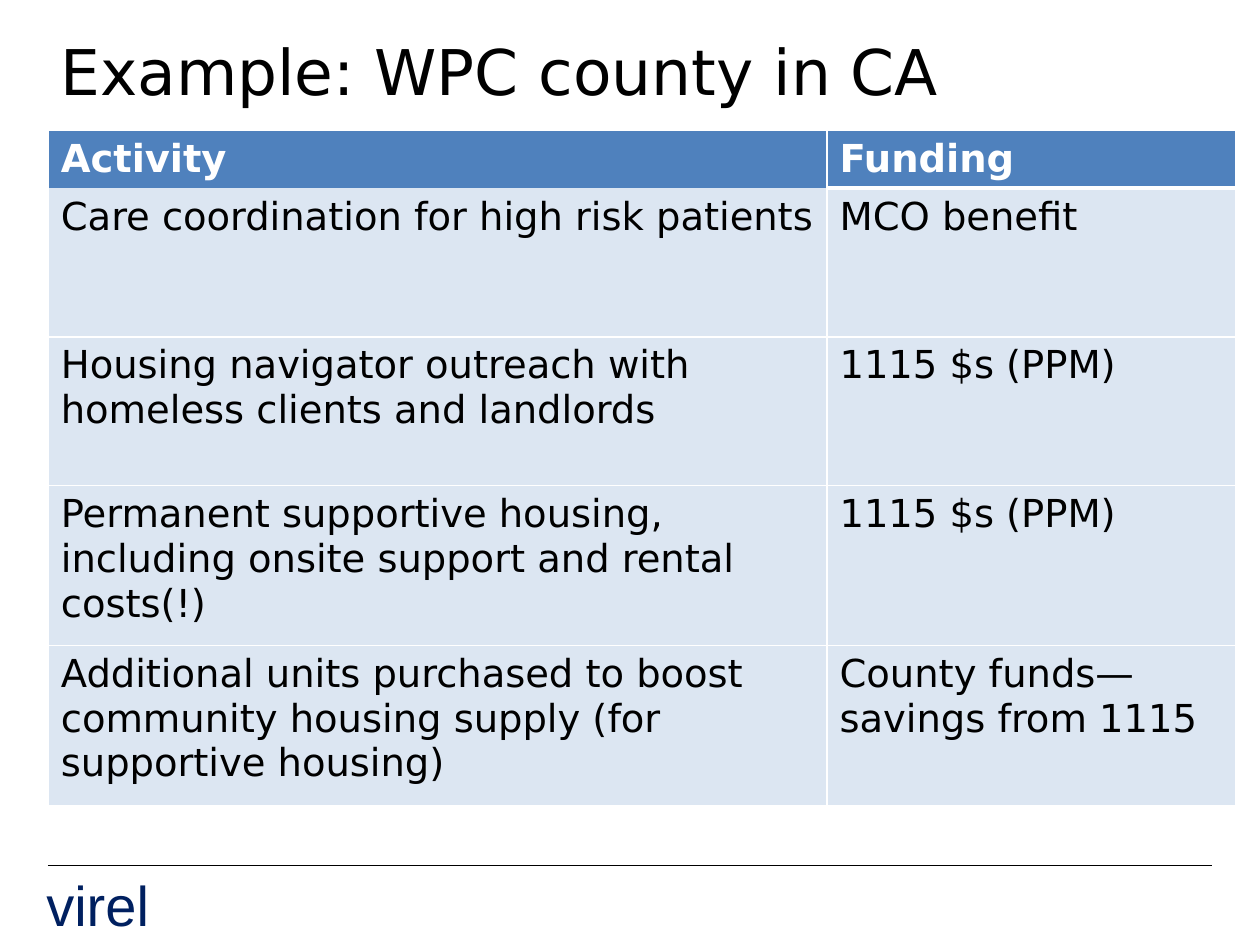
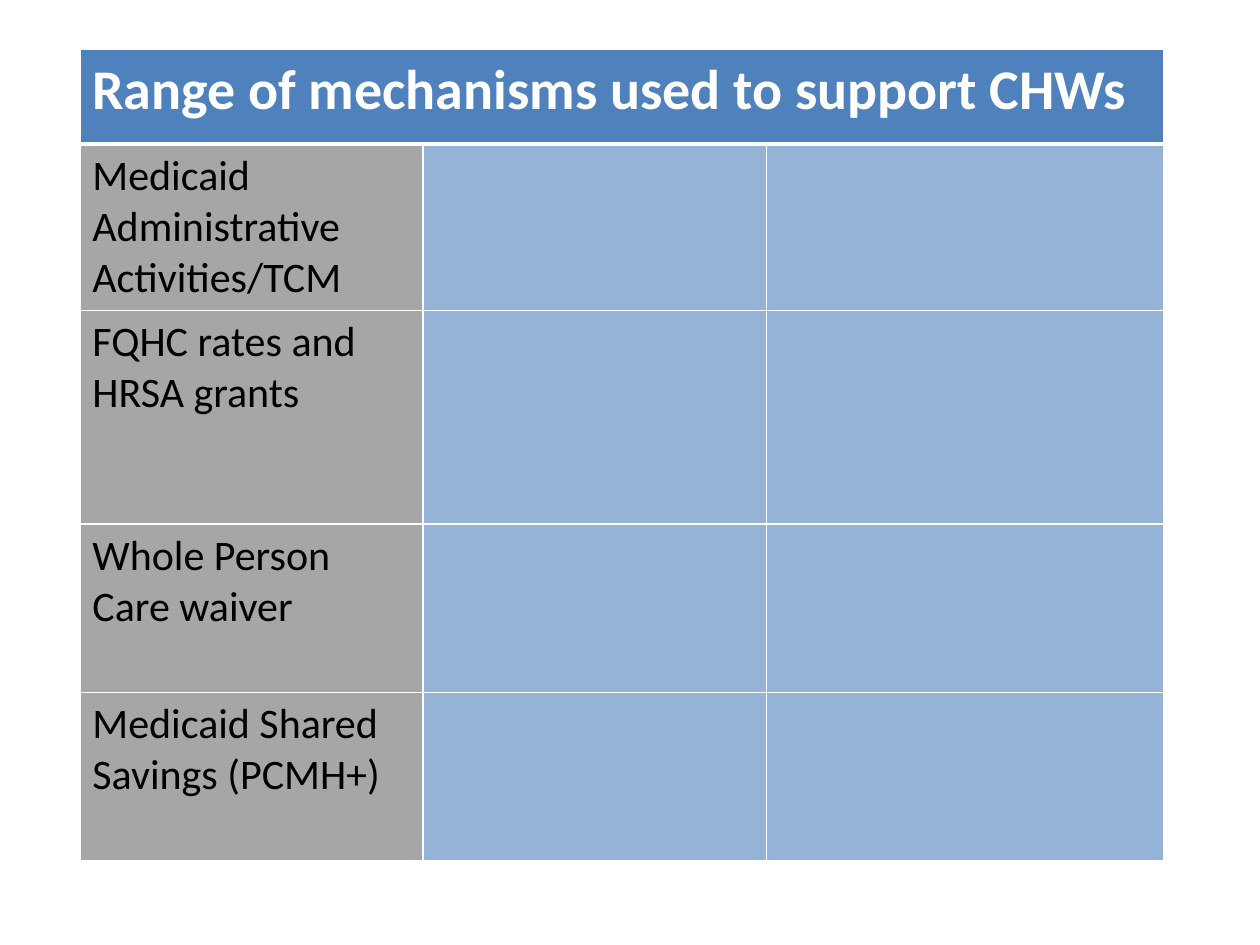
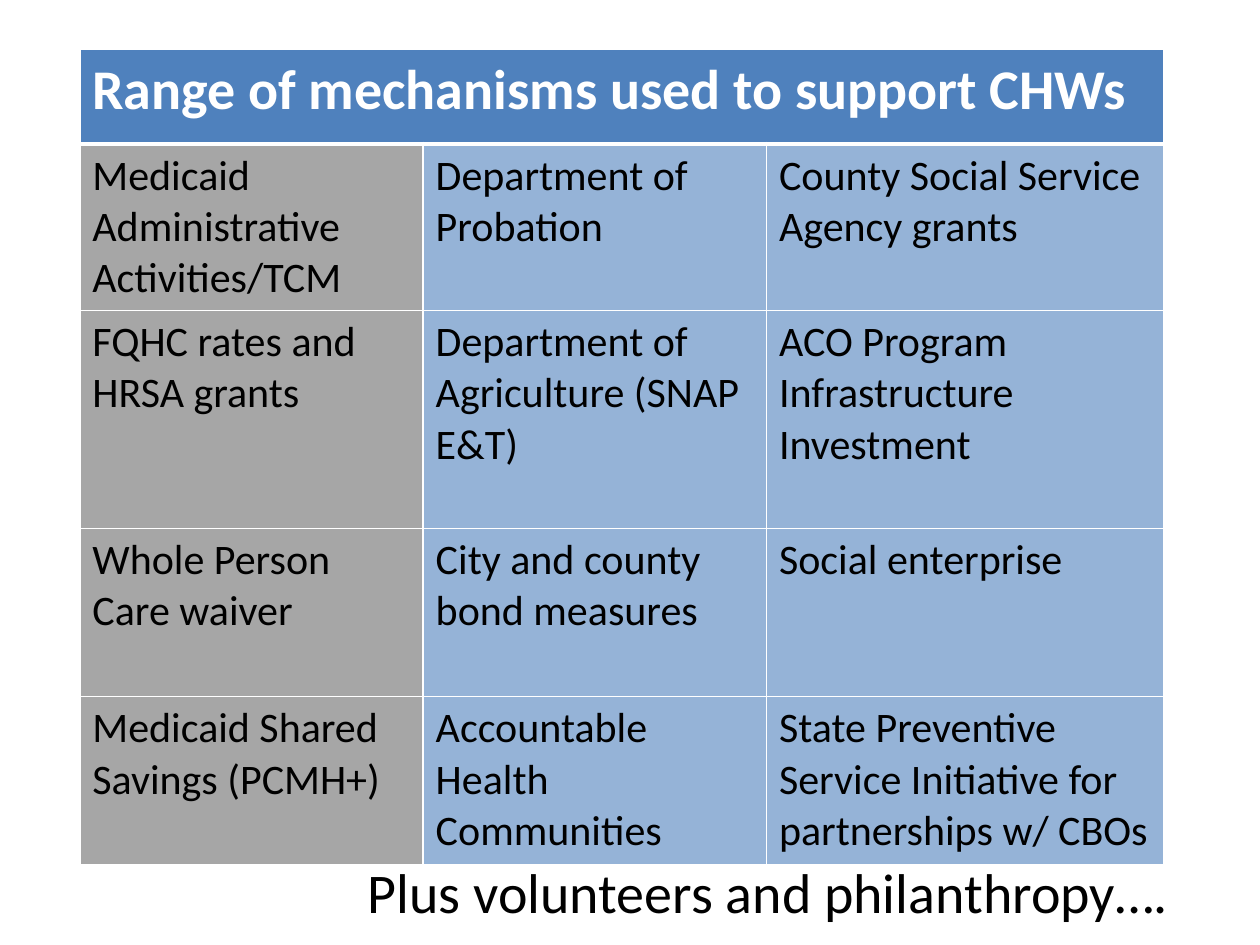
from lxml.etree import SubElement
from pptx import Presentation
from pptx.dml.color import RGBColor
from pptx.enum.shapes import MSO_CONNECTOR
from pptx.enum.text import MSO_ANCHOR, MSO_AUTO_SIZE, PP_ALIGN
from pptx.oxml import parse_xml
from pptx.oxml.ns import nsdecls, qn
from pptx.util import Pt

COLORS = {"black": "000000", "white": "FFFFFF", "navy": "002060", "header": "4F81BD",
          "pale": "DCE6F2", "grey": "A6A6A6", "blue": "95B3D7"}

FORMATS = {
    "title": {"size": 36, "name": "DejaVu Sans", "color": "black"},
    "brand": {"size": 32, "name": "Arial", "color": "navy"},
    "closing": {"size": 32, "name": "Calibri", "color": "black"},
    "county_head": {"size": 22, "name": "DejaVu Sans", "color": "white", "bold": True},
    "county_body": {"size": 22, "name": "DejaVu Sans", "color": "black"},
    "range_head": {"size": 32, "name": "Calibri", "color": "white", "bold": True},
    "range_body": {"size": 24, "name": "Calibri", "color": "black"},
}

COUNTY_TITLE = "Example: WPC county in CA"
BRAND = "virel"
COUNTY_ROWS = [
    ("Activity", "Funding"),
    ("Care coordination for high risk patients", "MCO benefit"),
    ("Housing navigator outreach with homeless clients and landlords", "1115 $s (PPM)"),
    ("Permanent supportive housing, including onsite support and rental costs(!)",
     "1115 $s (PPM)"),
    ("Additional units purchased to boost community housing supply (for supportive housing)",
     "County funds—savings from 1115"),
]

RANGE_TITLE = "Range of mechanisms used to support CHWs"
MECHANISMS = [
    ("Medicaid Administrative Activities/TCM", "Department of Probation",
     "County Social Service Agency grants"),
    ("FQHC rates and HRSA grants", "Department of Agriculture (SNAP E&T)",
     "ACO Program Infrastructure Investment"),
    ("Whole Person Care waiver", "City and county bond measures", "Social enterprise"),
    ("Medicaid Shared Savings (PCMH+)", "Accountable Health Communities",
     "State Preventive Service Initiative for partnerships w/ CBOs"),
]
CLOSING = "Plus volunteers and philanthropy…."

COUNTY = {"at": (27.6, 74.4), "cols": (445, 233.3), "rows": (33.1, 85, 85, 91.4, 91.4),
          "style": "county", "fills": ("pale", "pale")}
RANGE = {"at": (45.6, 28.3), "cols": (196.2, 196.2, 227.2), "style": "range",
         "fills": ("grey", "blue", "blue")}
RANGE_HEIGHTS = {"first": (54, 94, 122.2, 96.2, 96.2), "full": (54, 94, 124.6, 96.2, 96.2)}
NO_STYLE = "{2D5ABB26-0587-4C30-8999-92F81FD0307C}"


def rgb(name):
    return RGBColor.from_string(COLORS[name])


def write(tf, text, style):
    p = tf.paragraphs[0]
    p.alignment = PP_ALIGN.LEFT
    r = p.add_run()
    r.text = text
    values = dict(FORMATS[style])
    r.font.color.rgb = rgb(values.pop("color"))
    values["size"] = Pt(values["size"])
    for key, value in values.items():
        setattr(r.font, key, value)


def add_text(s, box, text, style):
    tf = s.shapes.add_textbox(*map(Pt, box)).text_frame
    tf.word_wrap = True
    write(tf, text, style)


def set_borders(cell, widths):
    tc_pr = cell._tc.get_or_add_tcPr()
    for i, (side, width) in enumerate(widths.items()):
        tc_pr.insert(i, parse_xml(
            f'<a:ln{side} {nsdecls("a")} w="{Pt(width)}"><a:solidFill>'
            f'<a:srgbClr val="{COLORS["white"]}"/></a:solidFill></a:ln{side}>'))


def add_grid(s, layout, heights, rows, bare_header=()):
    cols = layout["cols"]
    box = (*layout["at"], sum(cols), sum(heights))
    frame = s.shapes.add_table(len(rows), len(cols), *map(Pt, box))
    table = frame.table
    table._tbl.tblPr.find(qn("a:tableStyleId")).text = NO_STYLE
    for col, width in zip(table.columns, cols):
        col.width = Pt(width)
    for row, height in zip(table.rows, heights):
        row.height = Pt(height)
    for i, row in enumerate(rows):
        for j, fill in enumerate(layout["fills"]):
            cell = table.cell(i, j)
            cell.fill.solid()
            cell.fill.fore_color.rgb = rgb(fill if i else "header")
            sides = {"L": 1, "R": 1, "B": 1} if i else {"L": 1, "R": 1, "T": 1, "B": 3}
            if i == 0 and j in bare_header:
                del sides["B"]
            set_borders(cell, sides)
            if j < len(row):
                write(cell.text_frame, row[j], layout["style"] + ("_body" if i else "_head"))
    return table


def add_range_slide(prs, heights, shown):
    s = prs.slides.add_slide(prs.slide_layouts[6])
    rows = [(RANGE_TITLE,)] + [row[:shown] for row in MECHANISMS]
    table = add_grid(s, RANGE, heights, rows)
    table.cell(0, 0).merge(table.cell(0, 2))
    return s


def add_county_slide(prs):
    s = prs.slides.add_slide(prs.slide_layouts[5])
    title = s.shapes.title
    for key, value in zip(("left", "top", "width", "height"), (27.4, 15.1, 628.6, 51)):
        setattr(title, key, Pt(value))
    tf = title.text_frame
    for key, value in {"word_wrap": True, "auto_size": MSO_AUTO_SIZE.NONE,
                       "vertical_anchor": MSO_ANCHOR.TOP}.items():
        setattr(tf, key, value)
    write(tf, COUNTY_TITLE, "title")
    add_grid(s, COUNTY, COUNTY["rows"], COUNTY_ROWS, bare_header=(0,))
    rule = s.shapes.add_connector(MSO_CONNECTOR.STRAIGHT, *map(Pt, (27.4, 494.6, 692.6, 494.6)))
    rule.line.color.rgb = rgb("black")
    rule.line.width = Pt(0.75)
    SubElement(rule._element.spPr, qn("a:effectLst"))
    add_text(s, (19.4, 493.9, 103, 46), BRAND, "brand")


def main():
    prs = Presentation()
    prs.slide_width, prs.slide_height = Pt(720), Pt(540)
    add_county_slide(prs)
    add_range_slide(prs, RANGE_HEIGHTS["first"], 1)
    s = add_range_slide(prs, RANGE_HEIGHTS["full"], 3)
    add_text(s, (203, 486.7, 481, 46), CLOSING, "closing")
    prs.save("out.pptx")


if __name__ == "__main__":
    main()
